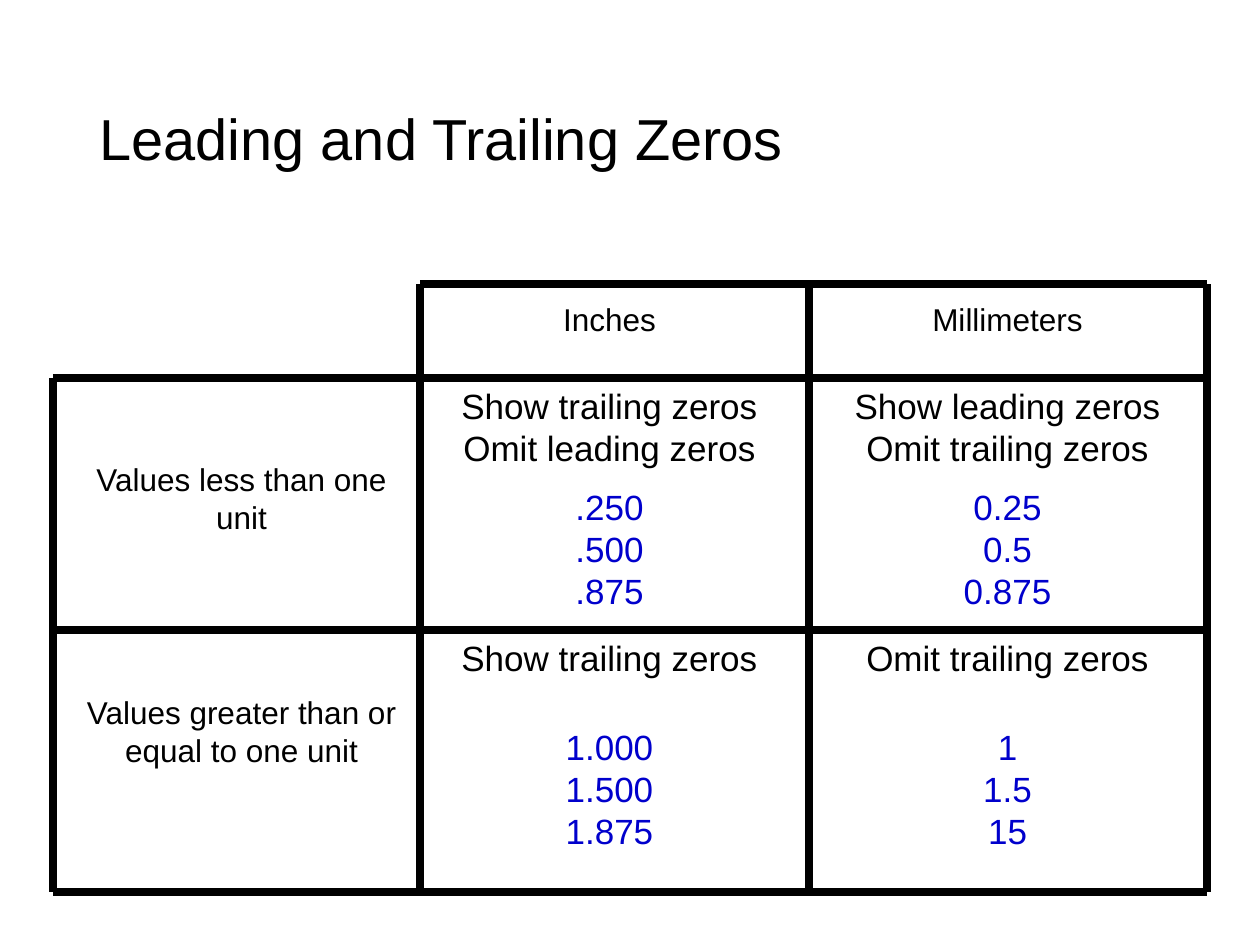
"""Build a slide on leading and trailing zeros in inch and millimeter values."""
import pptx
import pptx.dml.color
import pptx.enum.shapes
import pptx.enum.text
import pptx.oxml
import pptx.oxml.ns
import pptx.util

SCALE = 914400 / 126
COLORS = {"ink": "000000", "example": "0000CC"}
ALIGN = pptx.enum.text.PP_ALIGN
ANCHOR = pptx.enum.text.MSO_ANCHOR


def px(*lengths):
    return [pptx.util.Emu(round(length * SCALE)) for length in lengths]


def add_text(box, parts, size, align=ALIGN.CENTER, anchor=ANCHOR.TOP, line_spacing=1.0):
    frame = slide.shapes.add_textbox(*px(*box)).text_frame
    for name, value in {"word_wrap": True, "vertical_anchor": anchor}.items():
        setattr(frame, name, value)
    for index, (text, color, gap) in enumerate(parts):
        paragraph = frame.add_paragraph() if index else frame.paragraphs[0]
        paragraph.text = text
        layout = {"alignment": align, "line_spacing": line_spacing,
                  "space_before": pptx.util.Pt(gap)}
        for name, value in layout.items():
            setattr(paragraph, name, value)
        for run in paragraph.runs:
            for name, value in {"name": "Arial", "size": pptx.util.Pt(size)}.items():
                setattr(run.font, name, value)
            run.font.color.rgb = pptx.dml.color.RGBColor.from_string(COLORS[color])


presentation = pptx.Presentation()
presentation.slide_width, presentation.slide_height = px(1260, 945)
slide = presentation.slides.add_slide(presentation.slide_layouts[6])

add_text((87, 50, 1086, 183), [("Leading and Trailing Zeros", "ink", 0)], 33,
         ALIGN.LEFT, ANCHOR.MIDDLE, 0.9)

left, inch_edge, millimeter_edge, right = 53, 420, 809, 1207
top, first_row, second_row, bottom = 284, 378, 630, 892
rules = [(left, y, right, y) for y in (first_row, second_row, bottom)]
rules += [(x, bottom, x, top) for x in (inch_edge, millimeter_edge, right)]
rules += [(left, bottom, left, first_row), (inch_edge, top, right, top)]
for rule in rules:
    connector = slide.shapes.add_connector(
        pptx.enum.shapes.MSO_CONNECTOR.STRAIGHT, *px(*rule))
    connector.line.width = pptx.util.Pt(4.5)
    connector.line.color.rgb = pptx.dml.color.RGBColor.from_string(COLORS["ink"])
    properties = connector.element.find(pptx.oxml.ns.qn("p:spPr"))
    properties.append(pptx.oxml.parse_xml(
        f'<a:effectLst {pptx.oxml.ns.nsdecls("a")}/>'))

text_width = 357
labels = [
    ("Inches", 431, 294, 63),
    ("Millimeters", 829, 294, 63),
    ("Values less than one unit", 63, 454, 113),
    ("Values greater than or equal to one unit", 63, 687, 164),
]
for text, x, y, height in labels:
    add_text((x, y, text_width, height), [(text, "ink", 0)], 18)

cells = [
    (431, first_row, "Show trailing zeros\nOmit leading zeros", ".250\n.500\n.875", 10),
    (829, first_row, "Show leading zeros\nOmit trailing zeros", "0.25\n0.5\n0.875", 10),
    (431, second_row, "Show trailing zeros", "1.000\n1.500\n1.875", 27),
    (829, second_row, "Omit trailing zeros", "1\n1.5\n15", 27),
]
for x, y, advice, examples, gap in cells:
    add_text((x, y, text_width, 243),
             [(advice, "ink", 0), (examples, "example", gap)], 20)

presentation.save("out.pptx")
